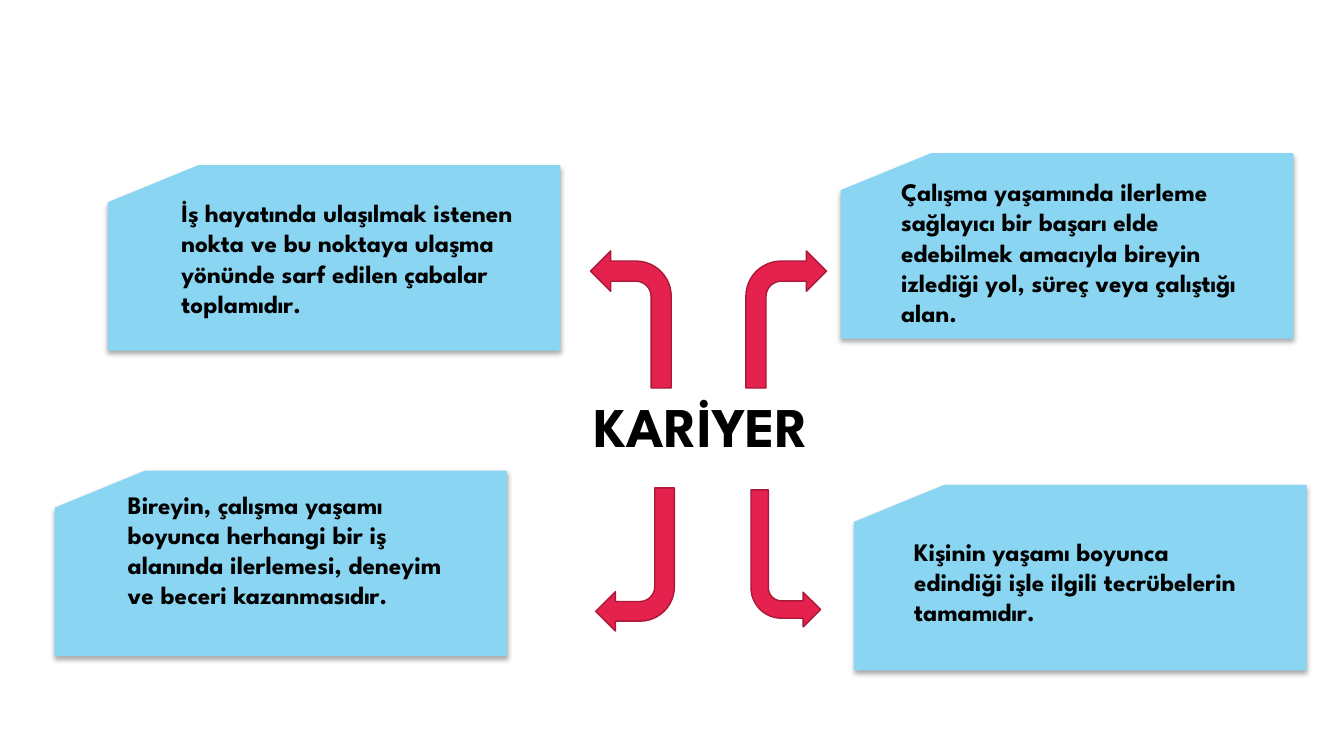
from lxml import etree
from pptx import Presentation
from pptx.dml.color import RGBColor
from pptx.enum.shapes import MSO_SHAPE as Shape
from pptx.enum.text import MSO_ANCHOR as Anchor, MSO_AUTO_SIZE as AutoSize, PP_ALIGN as Align
from pptx.oxml import parse_xml
from pptx.oxml.ns import nsdecls, qn
from pptx.util import Pt

COLORS = {"card": "89D5F2", "arrow": "E5224E", "edge": "A9193A", "text": "000000"}
CARD_SIZE = (323.3, 132.5)
SHADOW = (
    f'<a:effectLst {nsdecls("a")}>'
    f'<a:outerShdw blurRad="{Pt(3.5)}" dist="{Pt(2.2)}" dir="5400000" rotWithShape="0">'
    f'<a:srgbClr val="{COLORS["text"]}"><a:alpha val="32000"/></a:srgbClr>'
    '</a:outerShdw></a:effectLst>'
)


def add_shape(kind, bounds, color):
    shape = page.shapes.add_shape(kind, *map(Pt, bounds))
    shape.shadow.inherit = False
    shape.fill.solid()
    shape.fill.fore_color.rgb = RGBColor.from_string(COLORS[color])
    return shape


def add_text(text, bounds, size, frame_format, para_format):
    box = page.shapes.add_textbox(*map(Pt, bounds))
    frame = box.text_frame
    for name, value in frame_format.items():
        setattr(frame, name, value)
    para = frame.paragraphs[0]
    for name, value in para_format.items():
        setattr(para, name, value)
    span = para.add_run()
    span.text = text
    for name, value in {"name": "League Spartan", "size": Pt(size), "bold": True}.items():
        setattr(span.font, name, value)
    span.font.color.rgb = RGBColor.from_string(COLORS["text"])


deck = Presentation()
deck.slide_width, deck.slide_height = Pt(960), Pt(540)
page = deck.slides.add_slide(deck.slide_layouts[6])

add_text("KARİYER", (406, 255.6, 178.6, 101.5), 40,
         {"word_wrap": True, "vertical_anchor": Anchor.MIDDLE},
         {"alignment": Align.RIGHT, "line_spacing": 0.9})

# Card corner, text bounds, wording
cards = [
    ((77, 118), (122.4, 137.5, 265.7, 94.3),
     "İş hayatında ulaşılmak istenen nokta ve bu noktaya ulaşma yönünde sarf edilen çabalar toplamıdır."),
    ((610, 346.3), (645.8, 379.4, 262, 72.7),
     "Kişinin yaşamı boyunca edindiği işle ilgili tecrübelerin tamamıdır."),
    ((39, 336.2), (84.2, 345.6, 257, 116.6),
     "Bireyin, çalışma yaşamı boyunca herhangi bir iş alanında ilerlemesi, deneyim ve beceri kazanmasıdır."),
    ((600.5, 109.4), (636.5, 122.4, 267, 116.6),
     "Çalışma yaşamında ilerleme sağlayıcı bir başarı elde edebilmek amacıyla bireyin izlediği yol, "
     "süreç veya çalıştığı alan."),
]
for corner, text_bounds, wording in cards:
    card = add_shape(Shape.FLOWCHART_CARD, corner + CARD_SIZE, "card")
    card.line.fill.background()
    properties = card._element.spPr
    properties.replace(properties.find(qn("a:effectLst")), parse_xml(SHADOW))
    add_text(wording, text_bounds, 18,
             {"word_wrap": True, "auto_size": AutoSize.SHAPE_TO_FIT_TEXT}, {})

# Arrow bounds, rotation, mirrored
arrows = [
    ((532.8, 179.3, 57.6, 97.9), 0, False),
    ((536.4, 349.9, 49.7, 97.9), 180, True),
    ((425.5, 348.5, 56.2, 102.2), 180, False),
    ((421.9, 179.3, 57.6, 97.9), 0, True),
]
for bounds, rotation, mirrored in arrows:
    arrow = add_shape(Shape.BENT_ARROW, bounds, "arrow")
    arrow.line.color.rgb = RGBColor.from_string(COLORS["edge"])
    arrow.line.width = Pt(1)
    arrow.rotation = rotation
    if mirrored:
        arrow._element.spPr.find(qn("a:xfrm")).set("flipH", "1")

deck.save("out.pptx")
